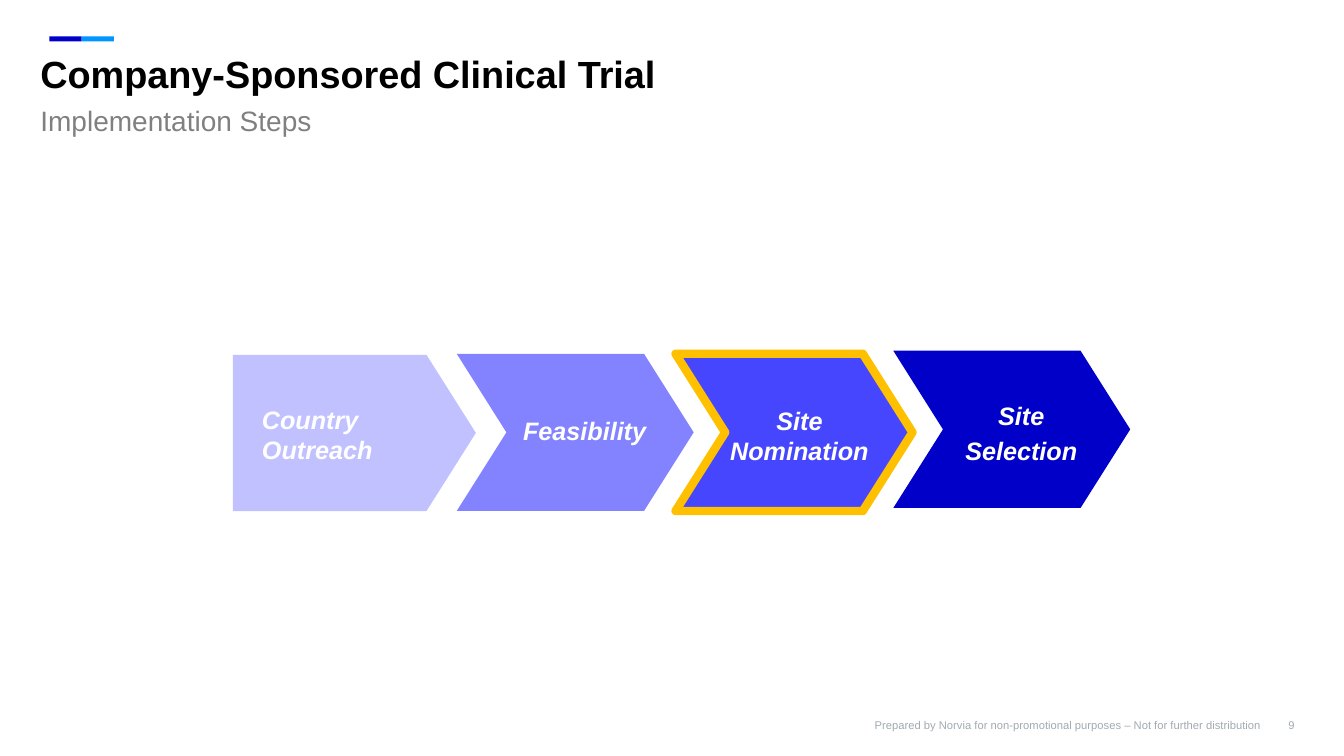
from pptx import Presentation
from pptx.dml.color import RGBColor
from pptx.enum import shapes, text
from pptx.oxml import xmlchemy
from pptx.util import Inches, Pt

NAVY = RGBColor(0x00, 0x00, 0xC9)
SKY = RGBColor(0x00, 0x95, 0xFF)
VIOLET = RGBColor(0x46, 0x46, 0xFF)
LAVENDER = RGBColor(0x83, 0x83, 0xFF)
PALE = RGBColor(0xC1, 0xC1, 0xFF)
GOLD = RGBColor(0xFF, 0xC0, 0x00)
WHITE = RGBColor(0xFF, 0xFF, 0xFF)
BLACK = RGBColor(0x00, 0x00, 0x00)
GRAY = RGBColor(0x80, 0x80, 0x80)
FOOTER_GRAY = RGBColor(0xA1, 0xAA, 0xB1)

RECT = shapes.MSO_SHAPE.RECTANGLE
CHEVRON = shapes.MSO_SHAPE.CHEVRON
PENTAGON = shapes.MSO_SHAPE.PENTAGON
LEFT, CENTER, RIGHT = text.PP_ALIGN.LEFT, text.PP_ALIGN.CENTER, text.PP_ALIGN.RIGHT
TOP, BOTTOM = text.MSO_ANCHOR.TOP, text.MSO_ANCHOR.BOTTOM

HEADINGS = [
    ("Company-Sponsored Clinical Trial", (0.4, 0.52, 12.35, 0.93), 27, BLACK, True),
    ("Implementation Steps", (0.4, 1.03, 12.35, 0.43), 20, GRAY, False),
]
FOOTERS = [
    ("Prepared by Norvia for non-promotional purposes – Not for further distribution",
     (6.66, 6.89, 5.85, 0.37)),
    ("9", (12.54, 6.89, 0.3, 0.37)),
]
STEPS = [
    (["Country Outreach"], PENTAGON, (2.31, 3.52, 2.41, 1.55), PALE, None,
     (2.5, 3.91, 1.7, 0.8), LEFT),
    (["Feasibility"], CHEVRON, (4.53, 3.51, 2.35, 1.56), LAVENDER, None,
     (5.01, 4.02, 1.56, 0.5), CENTER),
    (["Site Nomination"], CHEVRON, (6.7, 3.51, 2.35, 1.56), VIOLET, GOLD,
     (7.1, 3.92, 1.64, 0.8), CENTER),
    (["Site", "Selection"], CHEVRON, (8.86, 3.48, 2.35, 1.56), NAVY, None,
     (9.08, 3.87, 2.08, 0.87), CENTER),
]
ACCENT_COLORS = [NAVY, SKY]
ACCENT_WIDTH = 0.32


def inches(box):
    return [Inches(v) for v in box]


def add_block(s, kind, box, color, outline=None):
    sp = s.shapes.add_shape(kind, *inches(box))
    sp.shadow.inherit = False
    sp.fill.solid()
    sp.fill.fore_color.rgb = color
    if outline is None:
        sp.line.fill.background()
    else:
        sp.line.color.rgb = outline
        sp.line.width = Pt(6)
    return sp


def write(sp, lines, size, color, align=LEFT, anchor=TOP, margins=(0, 0, 0, 0),
          bold=False, italic=False, spacing=None, gap=0):
    tf = sp.text_frame
    tf.word_wrap = True
    tf.auto_size = text.MSO_AUTO_SIZE.NONE
    tf.vertical_anchor = anchor
    tf.margin_left, tf.margin_top, tf.margin_right, tf.margin_bottom = inches(margins)
    for i, line in enumerate(lines):
        p = tf.add_paragraph() if i else tf.paragraphs[0]
        p.alignment = align
        p.space_before = Pt(gap if i else 0)
        if spacing:
            p.line_spacing = spacing
        r = p.add_run()
        r.text = line
        r.font.name = "Arial"
        r.font.size = Pt(size)
        r.font.bold = bold
        r.font.italic = italic
        r.font.color.rgb = color


def remove_bullet(p):
    pPr = p._p.get_or_add_pPr()
    pPr.set("marL", "0")
    pPr.set("indent", "0")
    pPr.append(xmlchemy.OxmlElement("a:buNone"))


prs = Presentation()
prs.slide_width, prs.slide_height = Inches(13.33), Inches(7.5)
s = prs.slides.add_slide(prs.slide_layouts[1])

for sp, (heading, box, size, color, bold) in zip(s.placeholders, HEADINGS):
    sp.left, sp.top, sp.width, sp.height = inches(box)
    remove_bullet(sp.text_frame.paragraphs[0])
    write(sp, [heading], size, color, margins=(0, 0.05, 0, 0.05), bold=bold, spacing=0.85)

for i, color in enumerate(ACCENT_COLORS):
    add_block(s, RECT, (0.49 + i * ACCENT_WIDTH, 0.36, ACCENT_WIDTH, 0.05), color)

for footer, box in FOOTERS:
    sp = s.shapes.add_textbox(*inches(box))
    write(sp, [footer], 8, FOOTER_GRAY, RIGHT, BOTTOM, spacing=0.9)

for lines, kind, box, color, outline, label_box, align in STEPS:
    sp = add_block(s, kind, box, color, outline)
    sp.adjustments[0] = 0.316
    label = s.shapes.add_textbox(*inches(label_box))
    write(label, lines, 18, WHITE, align, margins=(0.1, 0.1, 0.08, 0.1),
          bold=True, italic=True, gap=3.6)

prs.save("out.pptx")
